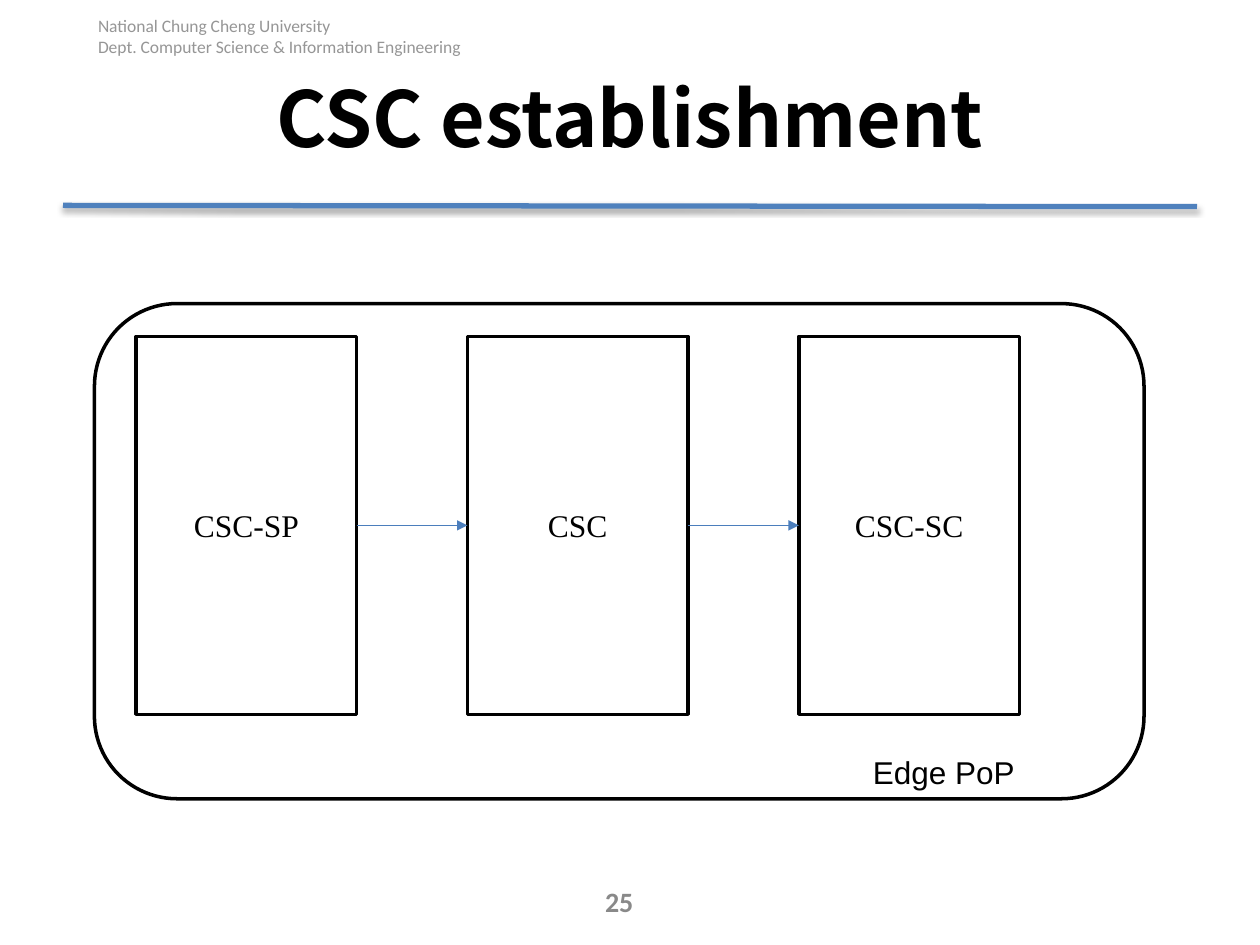
"""Build the CSC establishment slide."""
import lxml.etree
import pptx
import pptx.dml.color
import pptx.enum.shapes
import pptx.enum.text
import pptx.oxml
import pptx.util
from pptx.util import Inches

SHAPES = pptx.enum.shapes.MSO_SHAPE
STRAIGHT = pptx.enum.shapes.MSO_CONNECTOR.STRAIGHT
ALIGN = pptx.enum.text.PP_ALIGN
ANCHOR = pptx.enum.text.MSO_ANCHOR
NAMESPACE = "http://schemas.openxmlformats.org/drawingml/2006/main"


def color(value):
    return pptx.dml.color.RGBColor.from_string(value)


def write(box, text, font="Calibri", size=18, fill="000000", bold=False,
          align=ALIGN.CENTER, anchor=ANCHOR.MIDDLE):
    frame = box.text_frame
    frame.word_wrap = True
    frame.vertical_anchor = anchor
    for index, line in enumerate(text.split("\n")):
        para = frame.add_paragraph() if index else frame.paragraphs[0]
        para.alignment = align
        span = para.add_run()
        span.text = line
        span.font.name = font
        span.font.size = pptx.util.Pt(size)
        span.font.bold = bold
        span.font.color.rgb = color(fill)
        if "CJK" in font:
            east = lxml.etree.SubElement(span.font._element, f"{{{NAMESPACE}}}ea")
            east.set("typeface", font)


deck = pptx.Presentation()
deck.slide_width = Inches(10)
deck.slide_height = Inches(7.5)
page = deck.slides.add_slide(deck.slide_layouts[6])
shapes = page.shapes

header = shapes.add_textbox(Inches(0.68), Inches(0.07), Inches(3.4), Inches(0.43))
write(header, "National Chung Cheng University\nDept. Computer Science & Information Engineering",
      size=10, fill="969696", align=ALIGN.LEFT, anchor=ANCHOR.TOP)

rule = shapes.add_connector(STRAIGHT, Inches(0.5), Inches(1.63), Inches(9.5), Inches(1.64))
rule.line.color.rgb = color("4F81BD")
rule.line.width = pptx.util.Pt(3)
rule._element.spPr.append(pptx.oxml.parse_xml(
    f'<a:effectLst xmlns:a="{NAMESPACE}">'
    '<a:outerShdw blurRad="39370" dist="22860" dir="5400000" rotWithShape="0">'
    '<a:srgbClr val="000000"><a:alpha val="35000"/></a:srgbClr>'
    '</a:outerShdw></a:effectLst>'))

box_left, box_top, box_width, box_height, box_step = 1.08, 2.67, 1.75, 3, 2.63
outlines = [(SHAPES.ROUNDED_RECTANGLE, 0.75, 2.41, 8.33, 3.93, "")]
for index, label in enumerate(["CSC-SP", "CSC", "CSC-SC"]):
    left = box_left + index * box_step
    outlines.append((SHAPES.RECTANGLE, left, box_top, box_width, box_height, label))

for kind, left, top, width, height, label in outlines:
    box = shapes.add_shape(kind, Inches(left), Inches(top), Inches(width), Inches(height))
    box.shadow.inherit = False
    box.fill.solid()
    box.fill.fore_color.rgb = color("FFFFFF")
    box.line.color.rgb = color("000000")
    box.line.width = pptx.util.Pt(2)
    if label:
        write(box, label, font="Times New Roman")

middle = Inches(box_top + box_height / 2)
for index in range(2):
    start = box_left + box_width + index * box_step
    end = box_left + (index + 1) * box_step
    arrow = shapes.add_connector(STRAIGHT, Inches(start), middle, Inches(end), middle)
    arrow.line.color.rgb = color("4B7EBC")
    arrow.line.width = pptx.util.Pt(0.75)
    head = lxml.etree.SubElement(arrow.line._get_or_add_ln(), f"{{{NAMESPACE}}}tailEnd")
    head.set("type", "triangle")
    lxml.etree.SubElement(arrow._element.spPr, f"{{{NAMESPACE}}}effectLst")

title = shapes.add_textbox(Inches(0.5), Inches(0.3), Inches(9), Inches(1.25))
write(title, "CSC establishment", font="Noto Sans CJK TC", size=44, bold=True)

number = shapes.add_textbox(Inches(3.75), Inches(6.95), Inches(2.33), Inches(0.4))
write(number, "25", size=16, fill="898989", bold=True)

caption = shapes.add_textbox(Inches(6.83), Inches(5.93), Inches(1.92), Inches(0.4))
write(caption, "Edge PoP", font="Arial", align=ALIGN.LEFT, anchor=ANCHOR.TOP)

deck.save("out.pptx")
